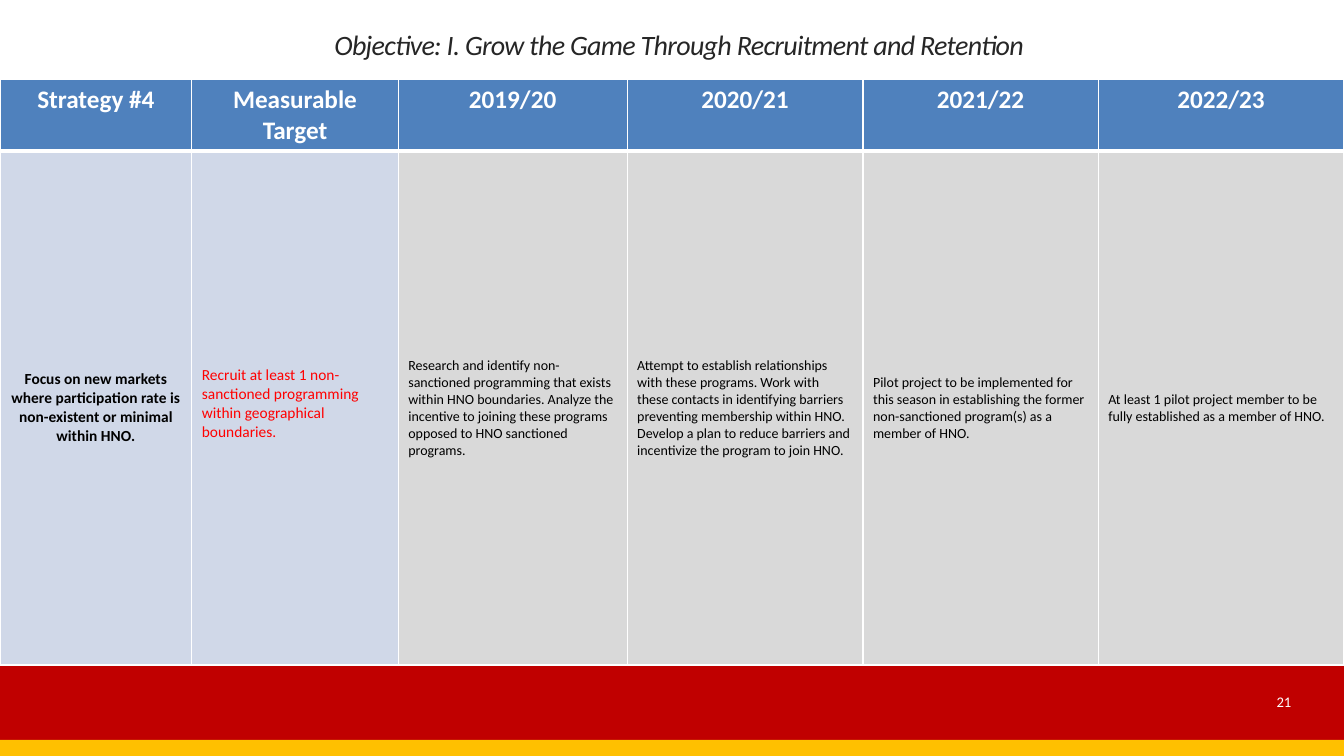
from lxml import etree
from pptx import Presentation
from pptx.dml.color import RGBColor
from pptx.enum import shapes, text
from pptx.oxml import ns
from pptx.util import Pt

HEX = {
    "white": "FFFFFF", "black": "000000", "ink": "262626", "alert": "FF0000",
    "head": "4F81BD", "pale": "D0D8E8", "grey": "D9D9D9",
    "red": "C00000", "gold": "FFC000",
}
MID = text.MSO_ANCHOR.MIDDLE
LEFT, MIDDLE, RIGHT = text.PP_ALIGN.LEFT, text.PP_ALIGN.CENTER, text.PP_ALIGN.RIGHT


def style(para, size, color, align, bold=False):
    para.alignment = align
    font = para.font
    font.name, font.size, font.bold = "Calibri", Pt(size), bold
    font.color.rgb = RGBColor.from_string(HEX[color])


def border(cell, widths):
    props = cell._tc.get_or_add_tcPr()
    for spot, (side, width) in enumerate(widths.items()):
        line = etree.Element(ns.qn("a:ln" + side), w=str(Pt(width)))
        fill = etree.SubElement(line, ns.qn("a:solidFill"))
        etree.SubElement(fill, ns.qn("a:srgbClr"), val=HEX["white"])
        props.insert(spot, line)


deck = Presentation()
deck.slide_width, deck.slide_height = Pt(960), Pt(540)
slide = deck.slides.add_slide(deck.slide_layouts[5])

for top, height, color in [(474.5, 54, "red"), (528.5, 11.5, "gold")]:
    bar = slide.shapes.add_shape(
        shapes.MSO_SHAPE.RECTANGLE, 0, Pt(top), Pt(960), Pt(height))
    bar.shadow.inherit = False
    bar.fill.solid()
    bar.fill.fore_color.rgb = RGBColor.from_string(HEX[color])
    bar.line.fill.background()

page = slide.shapes.add_textbox(Pt(826.5), Pt(487), Pt(103), Pt(28.5)).text_frame
page.word_wrap = True
page.vertical_anchor = MID
page.text = "21"
style(page.paragraphs[0], 10.5, "white", RIGHT)

plan = [
    (137, "Strategy #4",
     "Focus on new markets where participation rate is non-existent or minimal within HNO."),
    (147.5, "Measurable Target",
     "Recruit at least 1 non-sanctioned programming within geographical boundaries."),
    (163.5, "2019/20",
     "Research and identify non-sanctioned programming that exists within HNO boundaries. "
     "Analyze the incentive to joining these programs opposed to HNO sanctioned programs."),
    (168.5, "2020/21",
     "Attempt to establish relationships with these programs. Work with these contacts in "
     "identifying barriers preventing membership within HNO. Develop a plan to reduce "
     "barriers and incentivize the program to join HNO."),
    (168, "2021/22",
     "Pilot project to be implemented for this season in establishing the former "
     "non-sanctioned program(s) as a member of HNO."),
    (175.5, "2022/23",
     "At least 1 pilot project member to be fully established as a member of HNO."),
]
looks = [("pale", 11, "black", MIDDLE, True), ("pale", 11, "alert", LEFT, False)]
looks += [("grey", 10, "black", LEFT, False)] * 4

table = slide.shapes.add_table(2, len(plan), 0, Pt(57), Pt(960), Pt(418)).table
table.rows[0].height, table.rows[1].height = Pt(51), Pt(367)
for col, ((width, head, body), look) in enumerate(zip(plan, looks)):
    table.columns[col].width = Pt(width)
    pair = [(head, ("head", 18, "white", MIDDLE, True)), (body, look)]
    for row, (words, (fill, *form)) in enumerate(pair):
        cell = table.cell(row, col)
        cell.text = words
        cell.fill.solid()
        cell.fill.fore_color.rgb = RGBColor.from_string(HEX[fill])
        style(cell.text_frame.paragraphs[0], *form)
        border(cell, {"L": 1, "R": 1, "T": 3 if row else 1, "B": 1 if row else 3})
    cell.vertical_anchor = MID
table.cell(1, 1).margin_bottom = Pt(9.5)

title = slide.shapes.title
title.left, title.top, title.width, title.height = Pt(81.5), Pt(14.5), Pt(807), Pt(33)
frame = title.text_frame
frame.text = "Objective: I. Grow the Game Through Recruitment and Retention"
frame.auto_size = text.MSO_AUTO_SIZE.NONE
frame.word_wrap = True
frame.vertical_anchor = text.MSO_ANCHOR.BOTTOM
para = frame.paragraphs[0]
style(para, 20, "ink", MIDDLE)
para.font.italic = True
para.line_spacing = 0.85
para.runs[0]._r.get_or_add_rPr().set("spc", "-50")

deck.save("out.pptx")
